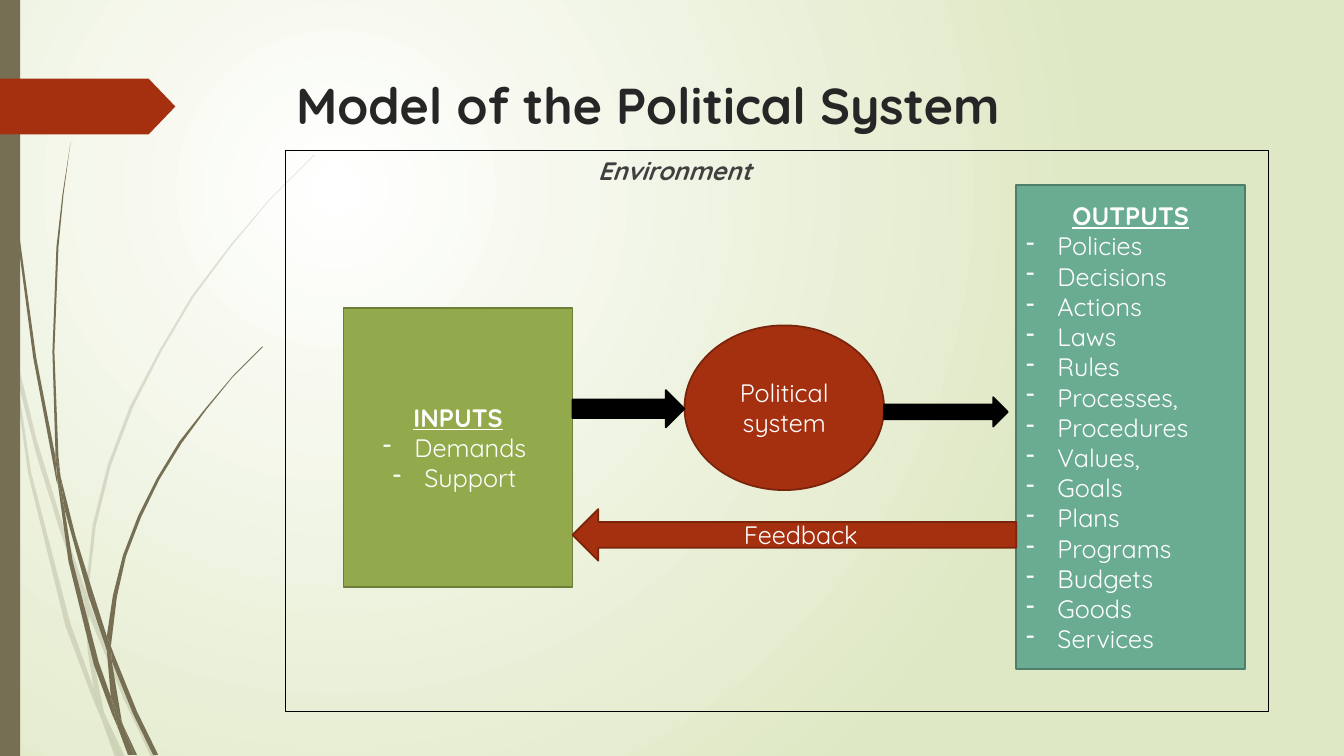
from lxml.etree import SubElement
from pptx import Presentation
from pptx.dml.color import RGBColor
from pptx.enum.shapes import MSO_SHAPE
from pptx.enum.text import MSO_ANCHOR, MSO_AUTO_SIZE, PP_ALIGN
from pptx.oxml import parse_xml
from pptx.oxml.ns import nsdecls, qn
from pptx.util import Cm, Pt

FONT = "Quicksand"
CM_PER_INCH = 2.54
COLOURS = {
    "white": "FFFFFF", "black": "000000", "pale green": "DFE8C4",
    "title": "262626", "body": "404040", "olive": "766F54",
    "red": "A53010", "dark red": "7A240C",
    "green": "92AA4C", "dark green": "6C7E38",
    "teal": "6AAC91", "dark teal": "4E7F6B",
}
INPUTS = ["Demands ", "Support "]
OUTPUTS = ["Policies", "Decisions", "Actions", "Laws", "Rules", "Processes,",
           "Procedures", "Values,", "Goals", "Plans", "Programs", "Budgets",
           "Goods", "Services"]

# Outlines of the grass blades: corners in inches
FAINT_GRASS = [
    [(.11, 3.5), (.09, 3.22), (0, 2.82), (0, 2.99), (.1, 3.44)],
    [(.58, 5.22), (.84, 5.99), (.85, 5.86), (.62, 5.2), (.36, 4.35),
     (.14, 3.45), (.17, 3.76), (.36, 4.51)],
    [(.92, 6.07), (.88, 5.96), (.88, 6.1), (1.23, 6.94), (1.5, 7.51),
     (1.55, 7.51), (1.27, 6.92)],
    [(1.19, 7.51), (1.24, 7.51), (1.05, 7.11)],
    [(.93, 6.83), (.7, 6.19), (.31, 4.69), (.17, 3.76), (.11, 3.5),
     (.28, 4.7), (.65, 6.21), (.92, 6.93), (1.01, 7.14), (.99, 7.07)],
    [(.84, 5.99), (.87, 6.46), (.93, 6.83), (.96, 6.92), (1.05, 7.11),
     (1.03, 7.06), (.91, 6.46), (.88, 6.1), (.88, 6.08)],
    [(.88, 5.84), (.95, 5.22), (1.1, 4.62), (1.32, 4.04), (1.6, 3.49),
     (1.92, 2.95), (2.29, 2.45), (2.68, 1.98), (3.12, 1.54), (3.12, 1.53),
     (2.68, 1.97), (2.28, 2.44), (1.9, 2.94), (1.58, 3.48), (1.29, 4.03),
     (1.07, 4.61), (.92, 5.21), (.85, 5.84), (.88, 5.96)],
    [(1.01, 7.14), (1.14, 7.51), (1.19, 7.51)],
    [(.88, 6.08), (.88, 6.1), (.88, 5.96), (.85, 5.86), (.84, 5.99)],
    [(.96, 6.92), (.93, 6.83), (.99, 7.07), (1.01, 7.14), (1.19, 7.51),
     (1.05, 7.11)],
]
DARK_GRASS = [
    [(.07, 1.1), (.17, 2.33), (.33, 3.55), (.56, 4.77), (.57, 4.81),
     (.55, 4.53), (.36, 3.55), (.19, 2.32), (.08, 1.09), (.04, 0),
     (.03, 0), (.04, .48)],
    [(.88, 5.92), (1.06, 6.45), (1.06, 6.31), (.93, 5.9), (.75, 5.32),
     (.6, 4.72), (.64, 5.05)],
    [(1.13, 6.49), (1.1, 6.41), (1.11, 6.56), (1.32, 7.08), (1.52, 7.49),
     (1.57, 7.49), (1.36, 7.06)],
    [(1.1, 6.91), (.98, 6.57), (.72, 5.56), (.64, 5.05), (.57, 4.77),
     (.68, 5.57), (.93, 6.59), (1.11, 7.08), (1.17, 7.22), (1.16, 7.17)],
    [(.6, 4.72), (.58, 4.53), (.54, 3.49), (.58, 2.45), (.63, 1.93),
     (.7, 1.41), (.62, 1.93), (.56, 2.45), (.52, 3.49), (.55, 4.49)],
    [(1.33, 7.49), (1.36, 7.49), (1.22, 7.19)],
    [(.57, 4.77), (.64, 5.05), (.6, 4.72), (.55, 4.49), (.55, 4.53)],
    [(1.11, 6.33), (1.16, 5.92), (1.25, 5.52), (1.4, 5.13), (1.58, 4.76),
     (1.8, 4.4), (2.05, 4.06), (2.31, 3.74), (2.61, 3.44), (2.6, 3.44),
     (2.31, 3.73), (2.04, 4.05), (1.78, 4.38), (1.56, 4.74), (1.37, 5.12),
     (1.22, 5.51), (1.12, 5.91), (1.06, 6.31), (1.1, 6.41)],
    [(1.17, 7.22), (1.27, 7.49), (1.31, 7.49)],
    [(1.06, 6.45), (1.1, 6.91), (1.16, 7.06), (1.22, 7.19), (1.21, 7.16),
     (1.11, 6.56), (1.09, 6.51)],
    [(1.06, 6.45), (1.09, 6.51), (1.11, 6.56), (1.1, 6.41), (1.06, 6.31)],
    [(1.16, 7.06), (1.1, 6.91), (1.16, 7.17), (1.17, 7.22), (1.3, 7.49),
     (1.33, 7.49), (1.22, 7.19)],
]


def colour(name):
    return RGBColor.from_string(COLOURS[name])


def place(shape, left, top, width, height):
    shape.left, shape.top = Cm(left), Cm(top)
    shape.width, shape.height = Cm(width), Cm(height)


def paint(shape, fill, line=None):
    shape.shadow.inherit = False
    shape.fill.solid()
    shape.fill.fore_color.rgb = colour(fill)
    if line:
        shape.line.color.rgb = colour(line)
        shape.line.width = Pt(1.25)
    else:
        shape.line.fill.background()


def add_run(paragraph, text, size=18, text_colour="white", **styles):
    run = paragraph.add_run()
    run.text = text
    run.font.name, run.font.size = FONT, Pt(size)
    run.font.color.rgb = colour(text_colour)
    for style, value in styles.items():
        setattr(run.font, style, value)


def add_block(slide, kind, box, fill, line=None, text=None, **styles):
    shape = slide.shapes.add_shape(kind, *map(Cm, box))
    paint(shape, fill, line)
    if text:
        frame = shape.text_frame
        frame.word_wrap = True
        frame.vertical_anchor = MSO_ANCHOR.MIDDLE
        frame.paragraphs[0].alignment = PP_ALIGN.CENTER
        add_run(frame.paragraphs[0], text, **styles)
    return shape


def add_list_box(slide, box, fill, line, heading, items, alignment):
    shape = add_block(slide, MSO_SHAPE.RECTANGLE, box, fill, line, heading,
                      bold=True, underline=True)
    for item in items:
        paragraph = shape.text_frame.add_paragraph()
        paragraph.alignment = alignment
        properties = paragraph._p.get_or_add_pPr()
        properties.set("marL", str(Cm(0.79)))
        properties.set("indent", str(Cm(-0.79)))
        SubElement(properties, qn("a:buFontTx"))
        SubElement(properties, qn("a:buChar"), char="-")
        add_run(paragraph, item)


def add_grass(slide, blades, opacity):
    group = slide.shapes.add_group_shape()
    for corners in blades:
        outline = [(Cm(x * CM_PER_INCH), Cm(y * CM_PER_INCH))
                   for x, y in corners]
        builder = group.shapes.build_freeform(*outline[0])
        builder.add_line_segments(outline[1:], close=True)
        blade = builder.convert_to_shape()
        paint(blade, "olive")
        if opacity < 100:
            fill = blade._element.spPr.find(qn("a:solidFill"))
            SubElement(fill[0], qn("a:alpha"), val=str(opacity * 1000))


def set_background(slide):
    """Radial gradient centred in the upper left quarter."""
    slide.background.fill.solid()
    properties = slide._element.cSld.find(qn("p:bg")).find(qn("p:bgPr"))
    properties.replace(properties[0], parse_xml(
        f'<a:gradFill {nsdecls("a")} rotWithShape="1"><a:gsLst>'
        f'<a:gs pos="0"><a:srgbClr val="{COLOURS["white"]}"/></a:gs>'
        f'<a:gs pos="100000"><a:srgbClr val="{COLOURS["pale green"]}"/></a:gs>'
        '</a:gsLst><a:path path="circle"><a:fillToRect l="50000" t="50000" '
        'r="100000" b="100000"/></a:path></a:gradFill>'))


def add_decoration(slide):
    add_grass(slide, FAINT_GRASS, 20)
    add_grass(slide, DARK_GRASS, 100)
    add_block(slide, MSO_SHAPE.RECTANGLE, (0, 0, 0.51, 19.05), "olive")
    tag = add_block(slide, MSO_SHAPE.PENTAGON, (0, 1.98, 4.42, 1.41), "red")
    tag.adjustments[0] = 0.48


def fill_placeholders(slide):
    title, body = slide.shapes.title, slide.placeholders[1]
    place(title, 7.21, 1.73, 24.77, 3.56)
    place(body, 7.19, 3.79, 24.77, 14.14)
    for placeholder in (title, body):
        slide.shapes._spTree.append(placeholder._element)  # above the grass
        placeholder.text_frame.auto_size = MSO_AUTO_SIZE.NONE
        placeholder.text_frame.vertical_anchor = MSO_ANCHOR.TOP
        placeholder.text_frame.paragraphs[0].alignment = PP_ALIGN.LEFT
    add_run(title.text_frame.paragraphs[0], "Model of the Political System",
            36, "title", bold=True)
    body.line.color.rgb = colour("black")
    body.line.width = Pt(0.75)
    paragraph = body.text_frame.paragraphs[0]
    paragraph.space_before = Pt(10)
    properties = paragraph._p.get_or_add_pPr()
    properties.set("marL", str(Cm(7.62)))
    properties.set("indent", "0")
    SubElement(properties, qn("a:buNone"))
    add_run(paragraph, "Environment", 18, "body", bold=True, italic=True)


def main():
    presentation = Presentation()
    presentation.slide_width, presentation.slide_height = Cm(33.87), Cm(19.05)
    slide = presentation.slides.add_slide(presentation.slide_layouts[1])
    set_background(slide)
    add_decoration(slide)
    fill_placeholders(slide)
    add_block(slide, MSO_SHAPE.OVAL, (17.25, 8.2, 5.03, 4.15),
              "red", "dark red", "Political system")
    add_list_box(slide, (8.66, 7.76, 5.77, 7.03), "green", "dark green",
                 "INPUTS", INPUTS, PP_ALIGN.CENTER)
    add_list_box(slide, (25.61, 4.67, 5.77, 12.19), "teal", "dark teal",
                 "OUTPUTS", OUTPUTS, PP_ALIGN.LEFT)
    for box in ((14.43, 9.83, 2.82, 0.94), (22.28, 10.01, 3.12, 0.74)):
        add_block(slide, MSO_SHAPE.RIGHT_ARROW, box, "black", "black")
    add_block(slide, MSO_SHAPE.LEFT_ARROW, (14.43, 12.83, 11.18, 1.3),
              "red", "dark red", "Feedback")
    presentation.save("out.pptx")


if __name__ == "__main__":
    main()
